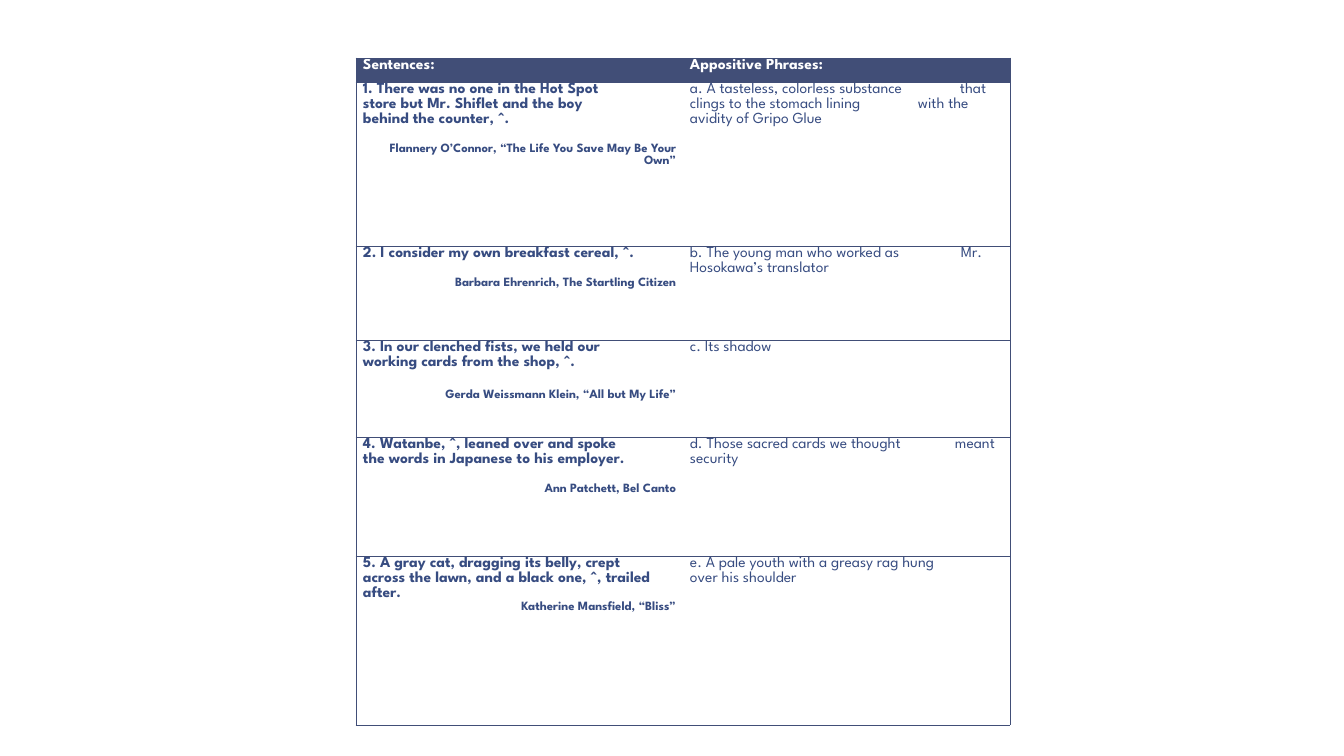
from lxml.etree import SubElement
from pptx import Presentation
from pptx.dml.color import RGBColor
from pptx.enum.text import PP_ALIGN as Align
from pptx.oxml.ns import qn
from pptx.util import Pt

# Content: lines of a sentence, its source, space above the source (pt),
# and the lines of the phrase, each with the tab stop it uses (px)
HEADERS = ("Sentences:", "Appositive Phrases:")
ROWS = [
    ("1. There was no one in the Hot Spot\vstore but Mr. Shiflet and the boy\v"
     "behind the counter, ^.",
     "Flannery O’Connor, “The Life You Save May Be Your Own”", 11,
     [("a. A tasteless, colorless substance\tthat", 270),
      ("clings to the stomach lining\twith the", 228),
      ("avidity of Gripo Glue", None)]),
    ("2. I consider my own breakfast cereal, ^.",
     "Barbara Ehrenrich, The Startling Citizen", 11,
     [("b. The young man who worked as\tMr.", 271),
      ("Hosokawa’s translator", None)]),
    ("3. In our clenched fists, we held our\vworking cards from the shop, ^.",
     "Gerda Weissmann Klein, “All but My Life”", 13,
     [("c. Its shadow", None)]),
    ("4. Watanbe, ^, leaned over and spoke\v"
     "the words in Japanese to his employer.",
     "Ann Patchett, Bel Canto", 11,
     [("d. Those sacred cards we thought\tmeant", 265),
      ("security", None)]),
    ("5. A gray cat, dragging its belly, crept\v"
     "across the lawn, and a black one, ^, trailed after.",
     "Katherine Mansfield, “Bliss”", 0,
     [("e. A pale youth with a greasy rag hung", None),
      ("over his shoulder", None)]),
]

# Layout in px
PX = 914400 / 100.8
SLIDE_W, SLIDE_H = 1344, 756
LEFT, TOP, COL_W, MARGIN = 356, 58, 327, 7
ROW_HEIGHTS = (24, 164, 94, 97, 119, 169)

FONT = "League Spartan"
NAVY = RGBColor(0x41, 0x4E, 0x77)
INK = RGBColor(0x37, 0x4C, 0x81)
WHITE = RGBColor(0xFF, 0xFF, 0xFF)


def px(n):
    return round(n * PX)


def add_text(tf, text, size=11, bold=True, color=INK, align=Align.LEFT,
             before=0, tab=None):
    p = tf.paragraphs[0]
    if p.text:
        p = tf.add_paragraph()
    p.text = text
    p.alignment = align
    p.line_spacing = 1.07
    if before:
        p.space_before = Pt(before)
    if tab:
        tabs = SubElement(p._p.get_or_add_pPr(), qn("a:tabLst"))
        SubElement(tabs, qn("a:tab"), pos=str(px(tab)), algn="l")
    f = p.font
    f.name, f.size, f.bold = FONT, Pt(size), bold
    f.color.rgb = color


def style_cell(cell, fill, open_side):
    cell.margin_left = cell.margin_right = px(MARGIN)
    cell.margin_top = cell.margin_bottom = 0
    for side in ("lnL", "lnR", "lnT", "lnB"):
        ln = SubElement(cell._tc.get_or_add_tcPr(), qn("a:" + side),
                        w=str(Pt(0.5)))
        if side == open_side:
            SubElement(ln, qn("a:noFill"))
        else:
            solid = SubElement(ln, qn("a:solidFill"))
            SubElement(solid, qn("a:srgbClr"), val=str(NAVY))
    cell.fill.solid()
    cell.fill.fore_color.rgb = fill


prs = Presentation()
prs.slide_width, prs.slide_height = px(SLIDE_W), px(SLIDE_H)
s = prs.slides.add_slide(prs.slide_layouts[6])

# Table frame
table = s.shapes.add_table(len(ROW_HEIGHTS), 2, px(LEFT), px(TOP),
                           px(2 * COL_W), px(sum(ROW_HEIGHTS))).table
for col in table.columns:
    col.width = px(COL_W)
for i, height in enumerate(ROW_HEIGHTS):
    table.rows[i].height = px(height)
    for j, open_side in enumerate(("lnR", "lnL")):
        style_cell(table.cell(i, j), WHITE if i else NAVY, open_side)

# Header row
for j, title in enumerate(HEADERS):
    add_text(table.cell(0, j).text_frame, title, color=WHITE)

# Sentences with their sources, and phrases
for i, (sentence, source, gap, phrase) in enumerate(ROWS, 1):
    tf = table.cell(i, 0).text_frame
    add_text(tf, sentence)
    add_text(tf, source, size=9, align=Align.RIGHT, before=gap)
    for line, tab in phrase:
        add_text(table.cell(i, 1).text_frame, line, bold=False, tab=tab)

prs.save("out.pptx")
